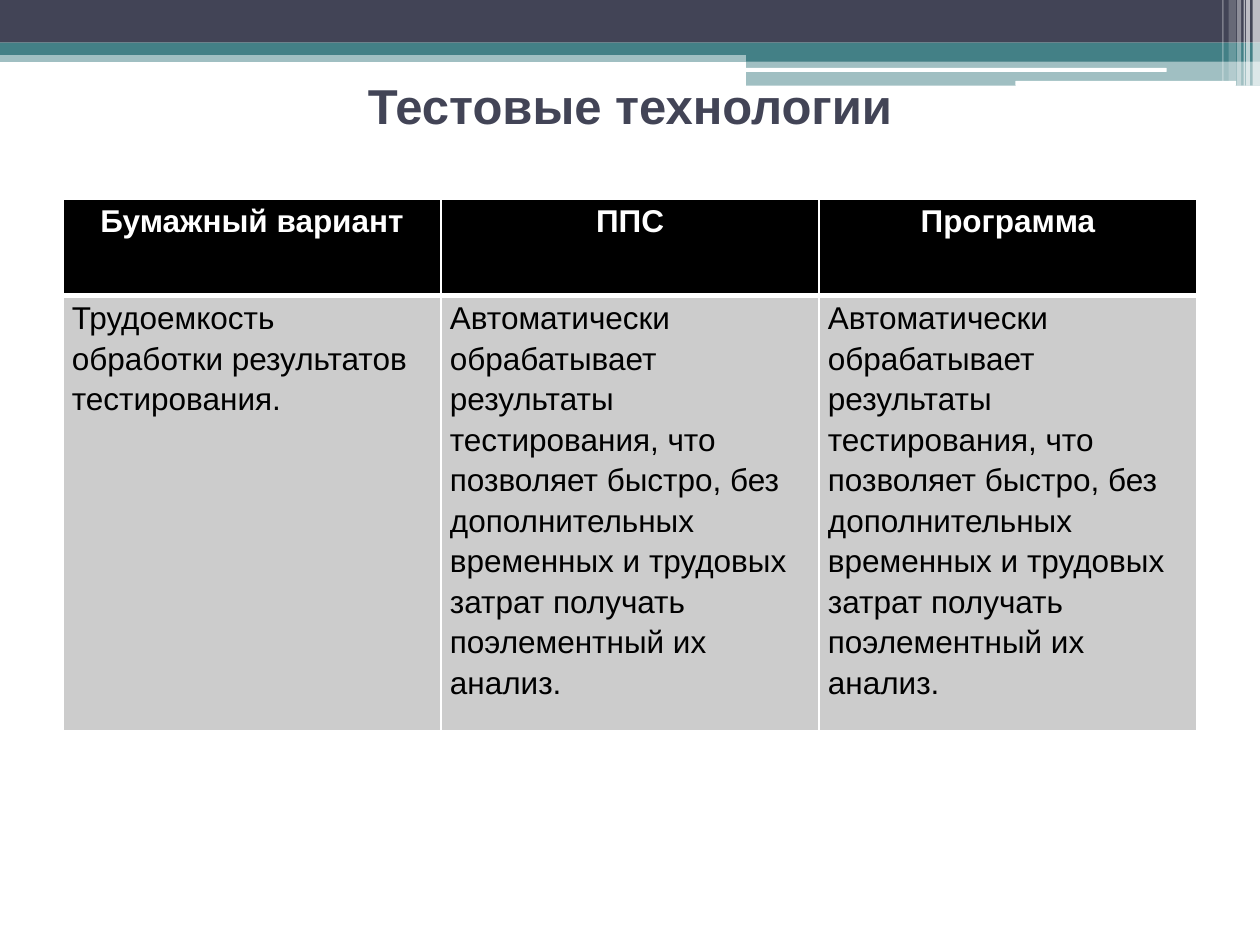
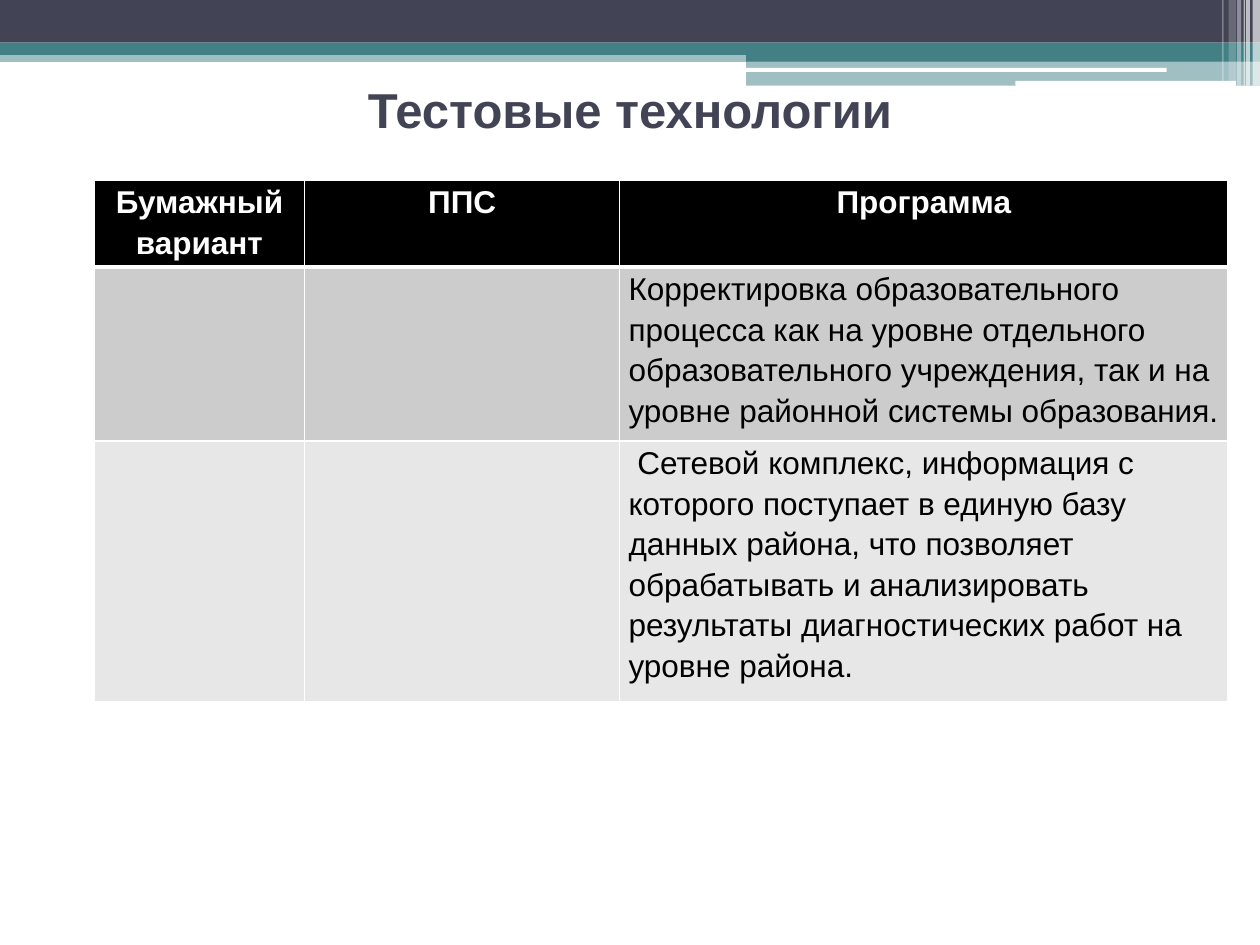
from collections import namedtuple

from lxml.etree import SubElement
from pptx import Presentation
from pptx.dml.color import RGBColor
from pptx.enum.shapes import MSO_SHAPE
from pptx.enum.text import MSO_ANCHOR, PP_ALIGN
from pptx.oxml import parse_xml
from pptx.oxml.ns import nsdecls, qn
from pptx.util import Cm, Pt

Box = namedtuple("Box", "left top width height")

FONT = "Arial"
SLATE = RGBColor(0x42, 0x44, 0x56)
TEAL = RGBColor(0x43, 0x80, 0x86)
WHITE = RGBColor(0xFF, 0xFF, 0xFF)
BLACK = RGBColor(0x00, 0x00, 0x00)
ROW_FILLS = [RGBColor(0xCC, 0xCC, 0xCC), RGBColor(0xE7, 0xE7, 0xE7)]

SLIDE_WIDTH, SLIDE_HEIGHT = 25.4, 19.05
BANNER = Box(0, 0, SLIDE_WIDTH, 1.73)
STEP_LEFT = 15.04  # where the lower, right-hand part of the banner begins

TITLE = "Тестовые технологии"
HEADINGS = ["Бумажный вариант", "ППС", "Программа"]
AUTOMATIC = ("Автоматически обрабатывает результаты тестирования, что позволяет "
             "быстро, без дополнительных временных и трудовых затрат получать "
             "поэлементный их анализ.")
LABOUR = "Трудоемкость обработки результатов тестирования."
CORRECTION = ("Корректировка образовательного процесса как на уровне отдельного "
              "образовательного учреждения, так и на уровне районной системы "
              "образования.")
NETWORK = (" Сетевой комплекс, информация с которого поступает в единую базу "
           "данных района, что позволяет обрабатывать и анализировать результаты "
           "диагностических работ на уровне района.")


def add_bar(slide, box, color, opacity=100, preset=MSO_SHAPE.RECTANGLE):
    """Add a borderless bar; opacity is in percent."""
    bar = slide.shapes.add_shape(preset, *map(Cm, box))
    bar.shadow.inherit = False
    bar.line.fill.background()
    bar.fill.solid()
    bar.fill.fore_color.rgb = color
    if opacity < 100:
        rgb = bar.fill._xPr.find(".//" + qn("a:srgbClr"))
        SubElement(rgb, qn("a:alpha"), val=str(opacity * 1000))


def add_banner(slide, box):
    step_width = box.width - STEP_LEFT
    bands = [
        (0, 1.02, box.width, 0.23, TEAL, 50),
        (0, 0, box.width, 0.86, SLATE, 100),
        (0, 0.86, box.width, 0.25, TEAL, 100),
        (STEP_LEFT, 0.99, step_width, 0.25, TEAL, 100),
        (STEP_LEFT, 1.22, step_width, 0.51, TEAL, 50),
    ]
    for left, top, width, height, color, opacity in bands:
        add_bar(slide, Box(box.left + left, box.top + top, width, height), color, opacity)

    for left, top, width, height in [(15.01, 1.37, 8.51, 0.08), (20.47, 1.63, 4.45, 0.1)]:
        add_bar(slide, Box(box.left + left, box.top + top, width, height), WHITE,
                preset=MSO_SHAPE.ROUNDED_RECTANGLE)

    short = box.height - 0.1
    stripes = [
        (25.25, 0.15, box.height, 65),
        (25.12, 0.08, box.height, 65),
        (25.07, 0.03, box.height, 60),
        (24.94, 0.08, box.height, 40),
        (24.77, 0.15, short, 20),
        (24.64, 0.03, short, 30),
    ]
    for left, width, height, opacity in stripes:
        add_bar(slide, Box(box.left + left, box.top, width, height), WHITE, opacity)


def style_paragraph(paragraph, size, color, bold, align):
    paragraph.alignment = align
    font = paragraph.font
    font.name, font.size, font.bold = FONT, Pt(size), bold
    font.color.rgb = color


def add_title(slide, box):
    frame = slide.shapes.add_textbox(*map(Cm, box)).text_frame
    frame.word_wrap = True
    frame.vertical_anchor = MSO_ANCHOR.MIDDLE
    frame.text = TITLE
    style_paragraph(frame.paragraphs[0], 28, SLATE, True, PP_ALIGN.CENTER)


def set_borders(cell, top, bottom):
    """Draw white cell borders, 1 pt at the sides; top and bottom in points."""
    properties = cell._tc.get_or_add_tcPr()
    sides = [("L", 1), ("R", 1), ("T", top), ("B", bottom)]
    for position, (side, width) in enumerate(sides):
        properties.insert(position, parse_xml(
            f'<a:ln{side} {nsdecls("a")} w="{Pt(width)}"><a:solidFill>'
            f'<a:srgbClr val="{WHITE}"/></a:solidFill></a:ln{side}>'))


def fill_cell(cell, text, row):
    is_header = row == 0
    cell.margin_left = cell.margin_right = Cm(0.18)
    cell.margin_top = cell.margin_bottom = 0
    cell.fill.solid()
    cell.fill.fore_color.rgb = BLACK if is_header else ROW_FILLS[row - 1]
    set_borders(cell, top=3 if row == 1 else 1, bottom=3 if is_header else 1)
    cell.text = text
    paragraph = cell.text_frame.paragraphs[0]
    paragraph.line_spacing = 1.15
    style_paragraph(paragraph, 18, WHITE if is_header else BLACK, is_header,
                    PP_ALIGN.CENTER if is_header else PP_ALIGN.LEFT)


def add_comparison(slide, box, column_shares, row_heights, body):
    """Add the table; columns split the box width by their shares."""
    rows = [HEADINGS, *body]
    table = slide.shapes.add_table(len(rows), len(HEADINGS), *map(Cm, box)).table
    for column, share in zip(table.columns, column_shares):
        column.width = Cm(box.width * share / sum(column_shares))
    for row, height in zip(table.rows, row_heights):
        row.height = Cm(height)
    for row, texts in enumerate(rows):
        for column, text in enumerate(texts):
            fill_cell(table.cell(row, column), text, row)


def add_comparison_slide(deck, title_box, table_corner, column_shares, row_heights, body):
    slide = deck.slides.add_slide(deck.slide_layouts[6])
    add_banner(slide, BANNER)
    add_title(slide, title_box)
    table_box = Box(*table_corner, 22.86, sum(row_heights))
    add_comparison(slide, table_box, column_shares, row_heights, body)


def main():
    deck = Presentation()
    deck.slide_width, deck.slide_height = Cm(SLIDE_WIDTH), Cm(SLIDE_HEIGHT)
    add_comparison_slide(
        deck, Box(1.27, 1.27, 22.86, 1.7), (1.27, 4.01),
        column_shares=(1, 1, 1), row_heights=(1.95, 8.15),
        body=[[LABOUR, AUTOMATIC, AUTOMATIC]])
    add_comparison_slide(
        deck, Box(1.27, 1.47, 22.86, 1.47), (1.9, 3.63),
        column_shares=(1.67, 2.5, 4.83), row_heights=(1.62, 3.25, 5.25),
        body=[["", "", CORRECTION], ["", "", NETWORK]])
    deck.save("out.pptx")


if __name__ == "__main__":
    main()
